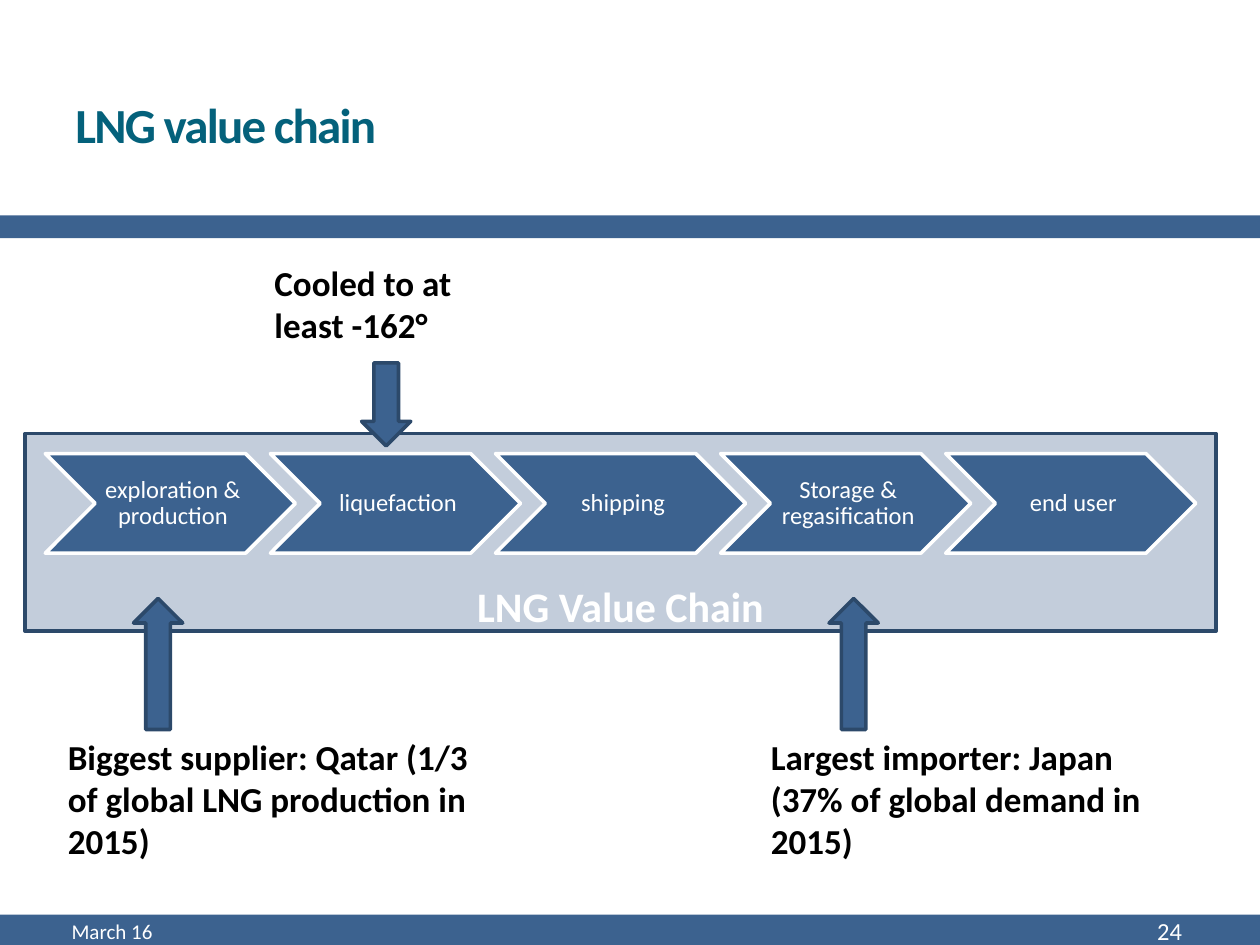
from pptx import Presentation
from pptx import util as u
from pptx.dml.color import RGBColor
from pptx.enum import shapes, text

# The grid: 100 columns by 75 rows of square cells
CELL = u.Inches(0.1)
COLUMNS, ROWS = 100, 75
BLUE, DARK_BLUE, TEAL = "3C628F", "2C496A", "04617B"
WHITE, BLACK, PALE_BLUE = "FFFFFF", "000000", "C3CDDB"
SHAPE = shapes.MSO_SHAPE
ANCHOR = text.MSO_ANCHOR
ALIGN = text.PP_ALIGN

STAGES = ["exploration & production", "liquefaction", "shipping",
          "Storage & regasification", "end user"]


def color(hex_string):
    return RGBColor.from_string(hex_string)


def grid(box):
    return [round(cells * CELL) for cells in box]


def add_block(slide, kind, box, fill=BLUE, line=None):
    shape = slide.shapes.add_shape(kind, *grid(box))
    shape.shadow.inherit = False
    shape.fill.solid()
    shape.fill.fore_color.rgb = color(fill)
    if line:
        shape.line.color.rgb = color(line)
        shape.line.width = u.Pt(2.08)
    else:
        shape.line.fill.background()
    return shape


def write(shape, words, size, ink=WHITE, bold=False, align=ALIGN.LEFT,
          anchor=ANCHOR.MIDDLE, insets=(1, 0.5, 1, 0.5)):
    frame = shape.text_frame
    frame.word_wrap = True
    frame.vertical_anchor = anchor
    (frame.margin_left, frame.margin_top,
     frame.margin_right, frame.margin_bottom) = grid(insets)
    paragraph = frame.paragraphs[0]
    paragraph.text = words
    paragraph.alignment = align
    font = paragraph.font
    font.name, font.size, font.bold = "Calibri", u.Pt(size), bold
    font.color.rgb = color(ink)
    return paragraph


def add_text(slide, box, words, size, **style):
    return write(slide.shapes.add_textbox(*grid(box)), words, size, **style)


def add_header(slide, box):
    left, top, width, height = box
    add_block(slide, SHAPE.RECTANGLE, (left, top + height - 1.8, width, 1.8))
    title = add_text(slide, (left + 5, top + 4.4, 52.1, 10.8),
                     "LNG value chain", 28, ink=TEAL, bold=True)
    title.runs[0].font._element.set("spc", "-100")  # tight letter spacing


def add_footer(slide, box):
    left, top, width, height = box
    add_block(slide, SHAPE.RECTANGLE, box)
    add_text(slide, (left + 4.7, top - 0.5, 31.7, 3.6), "March 16", 12)
    add_text(slide, (left + width - 16.9, top - 0.5, 11.7, 3.6), "24", 14,
             align=ALIGN.RIGHT)


def add_chain(slide, box):
    left, top, width, height = box
    # Backdrop with its label
    backdrop = add_block(slide, SHAPE.RECTANGLE, box, PALE_BLUE, DARK_BLUE)
    write(backdrop, "LNG Value Chain", 24, bold=True, align=ALIGN.CENTER,
          anchor=ANCHOR.BOTTOM, insets=(1, 0, 1, 0))
    # Chevrons overlap by a tenth of their length
    length, depth = 19.85, 7.9
    for index, stage in enumerate(STAGES):
        x, y = left + 1.6 + index * length * 0.9, top + 1.6
        add_block(slide, SHAPE.CHEVRON, (x, y, length, depth), BLUE, WHITE)
        label = add_text(slide, (x + depth / 2, y, length - depth, depth),
                         stage, 14, align=ALIGN.CENTER,
                         insets=(0.6, 0.2, 0.2, 0.2))
        label.line_spacing = 0.9


def add_note(slide, box, words, arrow, arrow_box):
    left, top = box[:2]
    add_text(slide, box, words, 20, ink=BLACK, bold=True, anchor=ANCHOR.TOP)
    x, y, width, height = arrow_box
    add_block(slide, arrow, (left + x, top + y, width, height),
              BLUE, DARK_BLUE)


def main():
    presentation = Presentation()
    presentation.slide_width = COLUMNS * CELL
    presentation.slide_height = ROWS * CELL
    slide = presentation.slides.add_slide(presentation.slide_layouts[6])

    add_footer(slide, (0, 72.6, COLUMNS, 2.4))
    add_header(slide, (0, 0, COLUMNS, 18.9))
    add_chain(slide, (2, 34.4, 94.5, 15.7))

    # Notes: arrow boxes are measured from the corner of their text
    add_note(slide, (20.8, 20.3, 19.8, 7.7), "Cooled to at least -162°",
             SHAPE.DOWN_ARROW, (7.9, 8.5, 3.9, 6.6))
    supply_arrow = (6.2, -10.4, 3.9, 10.4)
    add_note(slide, (4.4, 57.9, 34.7, 11.1),
             "Biggest supplier: Qatar (1/3 of global LNG production in 2015)",
             SHAPE.UP_ARROW, supply_arrow)
    add_note(slide, (60.2, 57.9, 34.7, 11.1),
             "Largest importer: Japan (37% of global demand in 2015)",
             SHAPE.UP_ARROW, (5.6, *supply_arrow[1:]))

    presentation.save("out.pptx")


if __name__ == "__main__":
    main()
